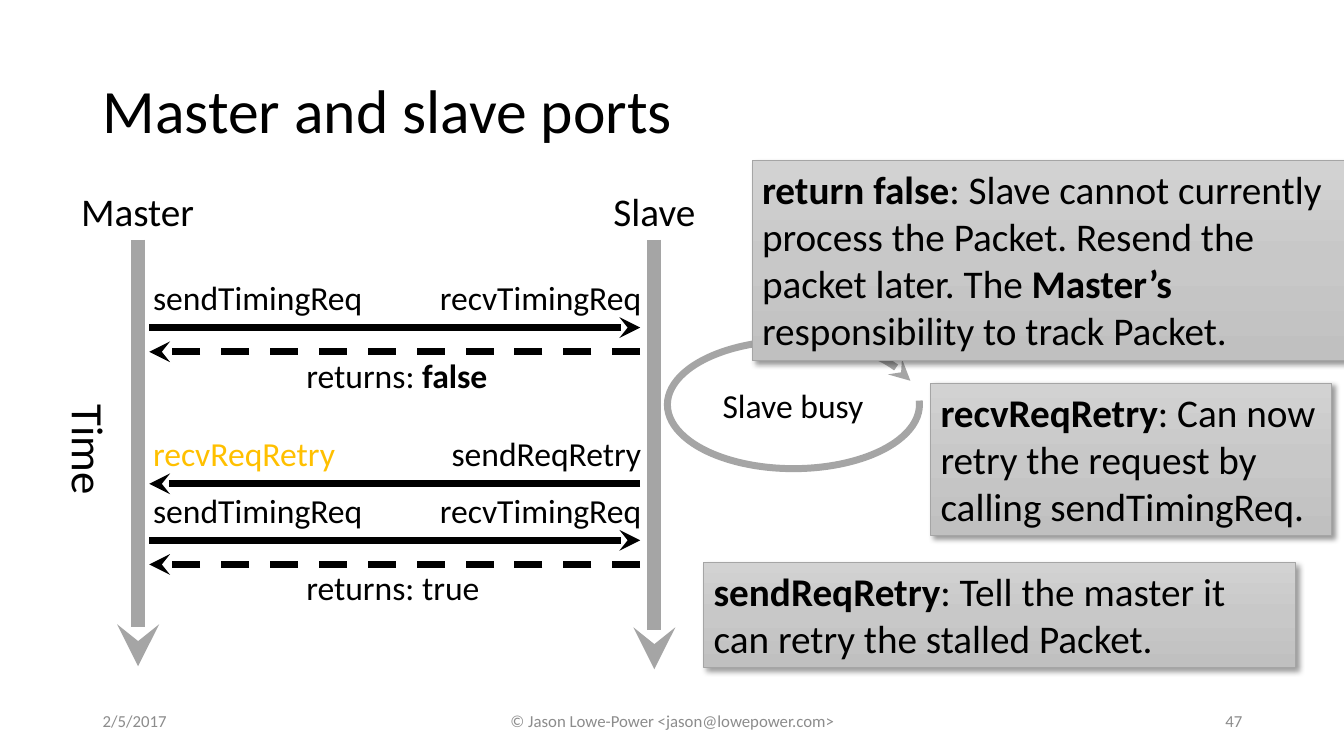
from copy import deepcopy
from dataclasses import dataclass
from typing import Any, Optional

from pptx import Presentation
from pptx.dml.color import RGBColor
from pptx.enum.dml import MSO_LINE
from pptx.enum.shapes import MSO_CONNECTOR, MSO_SHAPE
from pptx.enum.text import MSO_ANCHOR, MSO_AUTO_SIZE, PP_ALIGN
from pptx.oxml import parse_xml
from pptx.oxml.ns import nsdecls, qn
from pptx.util import Emu, Pt

LEFT, CENTER, RIGHT = PP_ALIGN.LEFT, PP_ALIGN.CENTER, PP_ALIGN.RIGHT
TOP, MIDDLE = MSO_ANCHOR.TOP, MSO_ANCHOR.MIDDLE
GROW, FIXED = MSO_AUTO_SIZE.SHAPE_TO_FIT_TEXT, MSO_AUTO_SIZE.NONE
DASH = MSO_LINE.DASH

EMU_PER_PX = 9144  # 100 px to the inch
FONT = "Calibri"
COLORS = {
    "text": "000000",
    "footer": "8C8C8C",
    "timeline": "A5A5A5",
    "highlight": "FFC000",
    "note_top": "D2D2D2",
    "note_middle": "C8C8C8",
    "note_bottom": "C0C0C0",
}

Run = tuple[str, bool]
Box = tuple[int, int, int, int]


@dataclass
class Label:
    box: Box
    runs: list[Run]
    size: int = 24
    align: Any = LEFT
    color: str = "text"
    rotation: int = 0


@dataclass
class Arrow:
    start: tuple[int, int]
    end: tuple[int, int]
    color: str = "text"
    width: int = 5
    dash: Optional[Any] = None


@dataclass
class Exchange:
    top: int
    master_call: str
    master_width: int
    slave_call: str
    slave_width: int
    to_slave: bool = True
    master_color: str = "text"
    result: Optional[Run] = None
    result_width: int = 0


@dataclass
class Note:
    box: Box
    runs: list[Run]


def px(value: int) -> Emu:
    return Emu(value * EMU_PER_PX)


def rgb(name: str) -> RGBColor:
    return RGBColor.from_string(COLORS[name])


def set_format(target: Any, values: dict[str, Any]) -> None:
    for name, value in values.items():
        setattr(target, name, value)


def write(frame: Any, runs: list[Run], size: int, color: str, align: Any, spacing: float = 1.0) -> None:
    paragraph = frame.paragraphs[0]
    set_format(paragraph, {"alignment": align, "line_spacing": spacing})
    for text, bold in runs:
        run = paragraph.add_run()
        run.text = text
        set_format(run.font, {"name": FONT, "size": Pt(size), "bold": bold})
        run.font.color.rgb = rgb(color)


def add_label(shapes: Any, label: Label) -> None:
    box = shapes.add_textbox(*map(px, label.box))
    box.rotation = label.rotation
    set_format(box.text_frame, {"word_wrap": False, "auto_size": GROW, "vertical_anchor": TOP})
    write(box.text_frame, label.runs, label.size, label.color, label.align)


def add_page_text(shapes: Any, label: Label, spacing: float = 1.0) -> None:
    box = shapes.add_textbox(*map(px, label.box))
    set_format(box.text_frame, {"word_wrap": True, "auto_size": FIXED, "vertical_anchor": MIDDLE})
    write(box.text_frame, label.runs, label.size, label.color, label.align, spacing)


def style_stroke(shape: Any, color: str, width: int, dash: Optional[Any] = None) -> None:
    shape.line.color.rgb = rgb(color)
    set_format(shape.line, {"width": Pt(width), "dash_style": dash})
    outline = shape._element.spPr.find(qn("a:ln"))
    outline.append(parse_xml(f'<a:tailEnd {nsdecls("a")} type="stealth"/>'))


def add_arrow(shapes: Any, arrow: Arrow) -> None:
    points = map(px, arrow.start + arrow.end)
    connector = shapes.add_connector(MSO_CONNECTOR.STRAIGHT, *points)
    style_stroke(connector, arrow.color, arrow.width, arrow.dash)
    connector._element.spPr.append(parse_xml(f'<a:effectLst {nsdecls("a")}/>'))


def add_exchange(shapes: Any, exchange: Exchange) -> None:
    top = exchange.top
    add_label(shapes, Label((142, top, exchange.master_width, 50),
                            [(exchange.master_call, False)], color=exchange.master_color))
    add_label(shapes, Label((646 - exchange.slave_width, top, exchange.slave_width, 50),
                            [(exchange.slave_call, False)], align=RIGHT))
    master_end, slave_end = (148, top + 55), (635, top + 55)
    if exchange.to_slave:
        add_arrow(shapes, Arrow(master_end, slave_end))
    else:
        add_arrow(shapes, Arrow(slave_end, master_end))
    if exchange.result:
        add_label(shapes, Label((294, top + 77, exchange.result_width, 50),
                                [("returns: ", False), exchange.result]))
        add_arrow(shapes, Arrow((635, top + 79), (148, top + 79), dash=DASH))


def add_busy_loop(shapes: Any) -> None:
    group = shapes.add_group_shape().shapes
    add_label(group, Label((706, 377, 161, 50), [("Slave busy", False)], align=CENTER))
    loop = group.add_shape(MSO_SHAPE.ARC, *map(px, (662, 338, 250, 127)))
    loop.adjustments[0], loop.adjustments[1] = 214.891, 209.079
    loop.fill.background()
    style_stroke(loop, "timeline", 5)
    loop.shadow.inherit = False


def add_note(shapes: Any, note: Note) -> None:
    panel = shapes.add_shape(MSO_SHAPE.RECTANGLE, *map(px, note.box))
    properties = panel._element.spPr
    # Three-stop vertical gradient
    panel.fill.gradient()
    panel.fill.gradient_angle = 270
    stop_list = properties.find(".//" + qn("a:gsLst"))
    stop_list.insert(1, deepcopy(stop_list[0]))
    shades = ("note_top", "note_middle", "note_bottom")
    for index, (stop, shade) in enumerate(zip(panel.fill.gradient_stops, shades)):
        stop.position = index / 2
        stop.color.rgb = rgb(shade)
    panel.line.color.rgb = rgb("timeline")
    panel.line.width = Pt(0.5)
    # Soft shadow to the lower right
    panel.shadow.inherit = False
    properties.find(qn("a:effectLst")).append(parse_xml(
        f'<a:outerShdw {nsdecls("a")} blurRad="50800" dist="38100" dir="2700000" algn="tl" rotWithShape="0">'
        '<a:srgbClr val="000000"><a:alpha val="40000"/></a:srgbClr></a:outerShdw>'))
    set_format(panel.text_frame, {"word_wrap": True, "auto_size": GROW, "vertical_anchor": TOP})
    write(panel.text_frame, note.runs, 28, "text", LEFT)


TITLE = Label((92, 40, 1080, 145), [("Master and slave ports", False)], 44)
FOOTERS = [
    Label((92, 695, 300, 40), [("2/5/2017", False)], 12, LEFT, "footer"),
    Label((442, 695, 450, 40), [("© Jason Lowe-Power <jason@lowepower.com>", False)], 12, CENTER, "footer"),
    Label((942, 695, 300, 40), [("47", False)], 12, RIGHT, "footer"),
]
AXIS_LABELS = [
    Label((70, 181, 133, 57), [("Master", False)], 28, CENTER),
    Label((598, 181, 102, 57), [("Slave", False)], 28, CENTER),
    Label((33, 415, 111, 64), [("Time", False)], 32, rotation=90),
]
TIMELINES = [
    Arrow((137, 238), (137, 661), "timeline", 10),
    Arrow((649, 238), (649, 664), "timeline", 10),
]
EXCHANGES = [
    Exchange(270, "sendTimingReq", 230, "recvTimingReq", 222, result=("false", True), result_width=202),
    Exchange(481, "sendTimingReq", 230, "recvTimingReq", 222, result=("true", False), result_width=194),
    Exchange(425, "recvReqRetry", 203, "sendReqRetry", 210, to_slave=False, master_color="highlight"),
]
NOTES = [
    Note((746, 159, 587, 199), [
        ("return false", True),
        (": Slave cannot currently process the Packet. Resend the packet later. The ", False),
        ("Master’s", True), (" responsibility to track Packet.", False)]),
    Note((698, 558, 587, 104), [
        ("sendReqRetry", True), (": Tell the master it can retry the stalled Packet.", False)]),
    Note((923, 380, 398, 151), [
        ("recvReqRetry", True), (": Can now retry the request by calling sendTimingReq.", False)]),
]


def main() -> None:
    deck = Presentation()
    set_format(deck, {"slide_width": px(1333), "slide_height": px(750)})
    shapes = deck.slides.add_slide(deck.slide_layouts[6]).shapes
    # Title and footer
    add_page_text(shapes, TITLE, 0.9)
    for footer in FOOTERS:
        add_page_text(shapes, footer)
    # Sequence diagram, then the notes over it
    for items, draw in ((TIMELINES, add_arrow), (AXIS_LABELS, add_label), (EXCHANGES, add_exchange)):
        for item in items:
            draw(shapes, item)
    add_busy_loop(shapes)
    for note in NOTES:
        add_note(shapes, note)
    deck.save("out.pptx")


if __name__ == "__main__":
    main()
